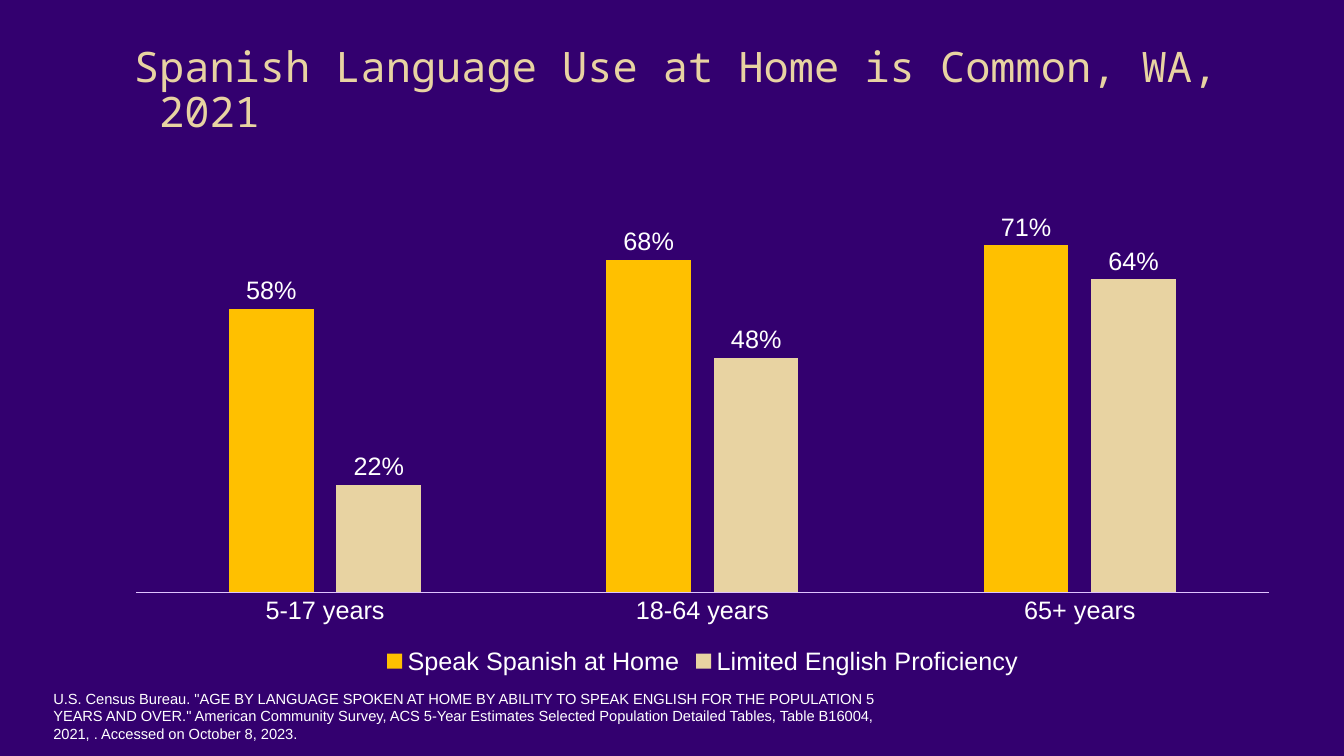
from pptx import Presentation
from pptx.chart.data import CategoryChartData
from pptx.dml.color import RGBColor
from pptx.enum.chart import XL_CHART_TYPE, XL_LABEL_POSITION, XL_LEGEND_POSITION, XL_TICK_MARK
from pptx.enum.text import MSO_AUTO_SIZE
from pptx.util import Pt

CLUSTERED = XL_CHART_TYPE.COLUMN_CLUSTERED
OUTSIDE_END = XL_LABEL_POSITION.OUTSIDE_END
BOTTOM = XL_LEGEND_POSITION.BOTTOM
NO_TICK = XL_TICK_MARK.NONE
FIT_SHAPE = MSO_AUTO_SIZE.SHAPE_TO_FIT_TEXT

COLORS = {
    "purple": "33006F",
    "gold": "E8D3A2",
    "amber": "FFC000",
    "lilac": "DFC3FF",
    "white": "FFFFFF",
}


def rgb(name):
    return RGBColor.from_string(COLORS[name])


def style_font(font, color, formats):
    for attribute, value in formats.items():
        setattr(font, attribute, value)
    font.color.rgb = rgb(color)


deck = Presentation()
deck.slide_width, deck.slide_height = Pt(960), Pt(540)
slide = deck.slides.add_slide(deck.slide_layouts[6])
slide.background.fill.solid()
slide.background.fill.fore_color.rgb = rgb("purple")

language_data = CategoryChartData(number_format="0%")
language_data.categories = ["5-17 years", "18-64 years", "65+ years"]
language_data.add_series("Speak Spanish at Home", [0.58, 0.68, 0.71])
language_data.add_series("Limited English Proficiency", [0.22, 0.48, 0.64])

language_use = slide.shapes.add_chart(
    CLUSTERED, Pt(80.6), Pt(136.8), Pt(842.4), Pt(349.2), language_data
).chart
chart_format = {"name": "Arial", "size": Pt(18), "bold": False}
style_font(language_use.font, "white", chart_format)
language_use.has_title = False
language_use.has_legend = True
language_use.legend.position = BOTTOM
language_use.legend.include_in_layout = False
style_font(language_use.legend.font, "white", chart_format)

ages = language_use.category_axis
ages.major_tick_mark = ages.minor_tick_mark = NO_TICK
ages.format.line.color.rgb = rgb("lilac")
ages.format.line.width = Pt(0.75)
style_font(ages.tick_labels.font, "white", chart_format)

shares = language_use.value_axis
shares.visible = False
shares.has_major_gridlines = False
shares.minimum_scale, shares.maximum_scale = 0, 0.8

columns = language_use.plots[0]
columns.gap_width, columns.overlap = 219, -27
columns.vary_by_categories = False
for series, color in zip(columns.series, ["amber", "gold"]):
    series.format.fill.solid()
    series.format.fill.fore_color.rgb = rgb(color)
    labels = series.data_labels
    label_format = {
        "show_value": True,
        "number_format": "0%",
        "number_format_is_linked": False,
        "position": OUTSIDE_END,
    }
    for attribute, value in label_format.items():
        setattr(labels, attribute, value)
    style_font(labels.font, "white", chart_format)

title_frame = slide.shapes.add_textbox(Pt(70.6), Pt(29.5), Pt(859), Pt(77.8)).text_frame
title_frame.word_wrap = True
title = title_frame.paragraphs[0]
title.text = "Spanish Language Use at Home is Common, WA, 2021"
title.line_spacing = 0.9
title_indents = title._p.get_or_add_pPr()
title_indents.set("marL", str(Pt(36)))
title_indents.set("indent", str(Pt(-18)))
style_font(title.runs[0].font, "gold", {"name": "Noto Sans Mono", "size": Pt(30)})

citation_frame = slide.shapes.add_textbox(Pt(31), Pt(488.9), Pt(628.6), Pt(45.4)).text_frame
citation_frame.word_wrap = True
citation_frame.auto_size = FIT_SHAPE
citation = citation_frame.paragraphs[0]
citation.text = (
    'U.S. Census Bureau. "AGE BY LANGUAGE SPOKEN AT HOME BY ABILITY TO SPEAK ENGLISH '
    'FOR THE POPULATION 5 YEARS AND OVER." American Community Survey, ACS 5-Year Estimates '
    "Selected Population Detailed Tables, Table B16004, 2021, . Accessed on October 8, 2023."
)
style_font(citation.runs[0].font, "white", {"name": "Arial", "size": Pt(10.5)})

deck.save("out.pptx")
